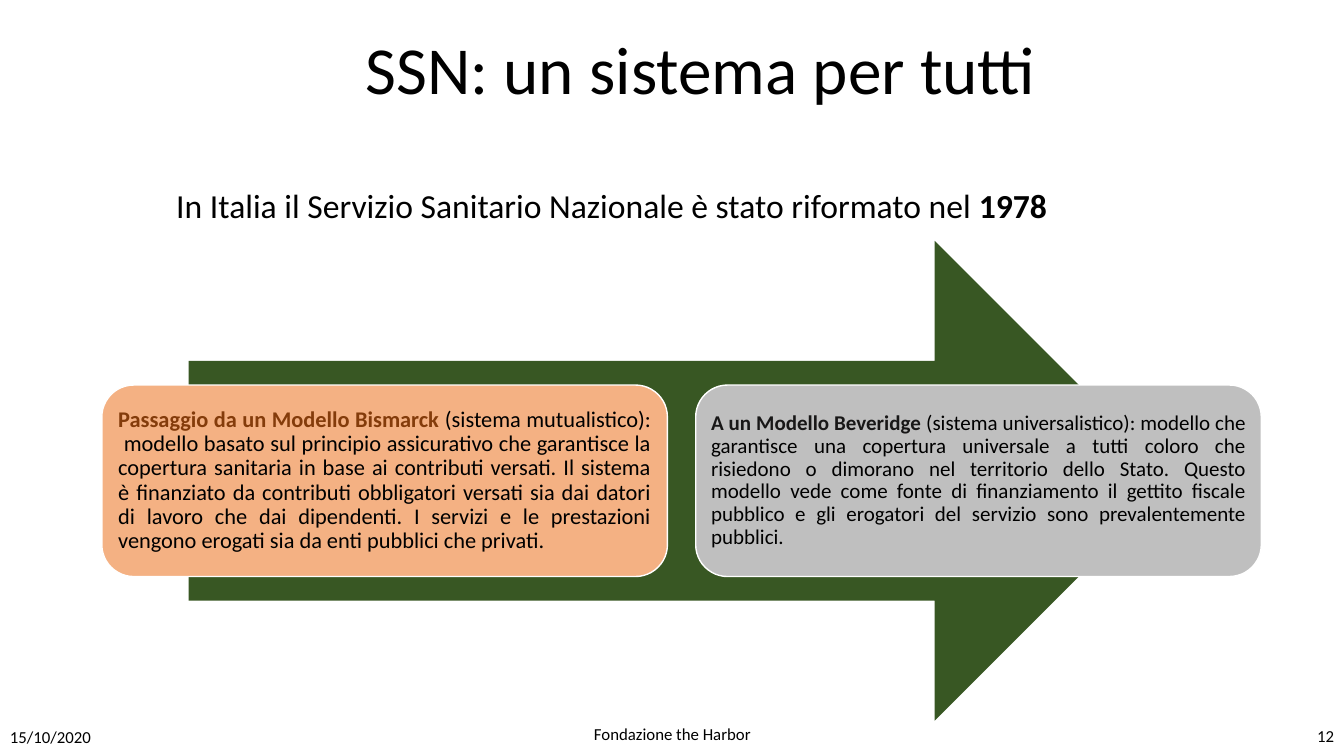
from pptx import Presentation
from pptx.dml.color import RGBColor
from pptx.enum.shapes import MSO_SHAPE
from pptx.enum.text import MSO_ANCHOR, MSO_AUTO_SIZE, PP_ALIGN
from pptx.util import Inches, Pt

FONT = "Calibri"
COLORS = {
    "text": "000000",
    "white": "FFFFFF",
    "arrow": "385723",
    "bismarck": "F4B183",
    "bismarck_lead": "843C0B",
    "beveridge": "BFBFBF",
    "beveridge_lead": "181717",
}
LEFT, CENTER, RIGHT = PP_ALIGN.LEFT, PP_ALIGN.CENTER, PP_ALIGN.RIGHT
JUSTIFY = PP_ALIGN.JUSTIFY
TOP, MIDDLE = MSO_ANCHOR.TOP, MSO_ANCHOR.MIDDLE
ARROW, ROUNDED = MSO_SHAPE.RIGHT_ARROW, MSO_SHAPE.ROUNDED_RECTANGLE
NO_AUTOFIT = MSO_AUTO_SIZE.NONE
PLAIN_TEXT = (False, "text")

CARD_TOP, CARD_WIDTH, CARD_HEIGHT = 3.82, 5.61, 1.9
CARDS = [
    # left, fill, lead colour, size, inset, lead, body
    (1.01, "bismarck", "bismarck_lead", 16, 0.07,
     "Passaggio da un Modello Bismarck ",
     "(sistema mutualistico):  modello basato sul principio assicurativo che "
     "garantisce la copertura sanitaria in base ai contributi versati. Il "
     "sistema è finanziato da contributi obbligatori versati sia dai datori di "
     "lavoro che dai dipendenti. I servizi e le prestazioni vengono erogati sia "
     "da enti pubblici che privati."),
    (6.9, "beveridge", "beveridge_lead", 15, 0.06,
     "A un Modello Beveridge ",
     "(sistema universalistico): modello che garantisce una copertura "
     "universale a tutti coloro che risiedono o dimorano nel territorio dello "
     "Stato. Questo modello vede come fonte di finanziamento il gettito fiscale "
     "pubblico e gli erogatori del servizio sono prevalentemente pubblici."),
]
FOOTERS = [
    # left, top, width, alignment, text
    (4.42, 7.08, 4.5, CENTER, "Fondazione the Harbor"),
    (10.33, 7.1, 3, RIGHT, "12"),
    (0, 7.11, 3, LEFT, "15/10/2020"),
]


def rgb(name):
    return RGBColor.from_string(COLORS[name])


def write(shape, spans, size, align=LEFT, anchor=MIDDLE, spacing=1.0):
    """Fill a shape with one paragraph of (text, bold, colour) spans."""
    frame = shape.text_frame
    frame.word_wrap = True
    frame.auto_size = NO_AUTOFIT
    frame.vertical_anchor = anchor
    para = frame.paragraphs[0]
    para.alignment = align
    para.line_spacing = spacing
    for text, bold, color in spans:
        span = para.add_run()
        span.text = text
        span.font.name = FONT
        span.font.size = Pt(size)
        span.font.bold = bold
        span.font.color.rgb = rgb(color)


def set_title(page, text):
    title = page.shapes.title
    title.left, title.top = Inches(1.2), Inches(0)
    title.width, title.height = Inches(11.5), Inches(1.45)
    write(title, [(text, *PLAIN_TEXT)], 48, CENTER, spacing=0.9)


def add_text(page, left, top, width, height, spans, size, **layout):
    box = page.shapes.add_textbox(
        Inches(left), Inches(top), Inches(width), Inches(height))
    write(box, spans, size, **layout)


def add_block(page, kind, left, top, width, height, fill):
    block = page.shapes.add_shape(
        kind, Inches(left), Inches(top), Inches(width), Inches(height))
    block.shadow.inherit = False
    block.fill.solid()
    block.fill.fore_color.rgb = rgb(fill)
    block.line.fill.background()
    return block


def add_card(page, left, fill, lead_color, size, inset, lead, body):
    card = add_block(page, ROUNDED, left, CARD_TOP, CARD_WIDTH, CARD_HEIGHT, fill)
    card.line.color.rgb = rgb("white")
    card.line.width = Pt(1)
    frame = card.text_frame
    frame.margin_left = frame.margin_right = Inches(inset)
    frame.margin_top = frame.margin_bottom = Inches(inset)
    spans = [(lead, True, lead_color), (body, *PLAIN_TEXT)]
    write(card, spans, size, JUSTIFY, spacing=0.9)


def main():
    deck = Presentation()
    deck.slide_width, deck.slide_height = Inches(13.33), Inches(7.5)
    page = deck.slides.add_slide(deck.slide_layouts.get_by_name("Title Only"))

    # Heading and introduction
    set_title(page, "SSN: un sistema per tutti")
    intro = [
        ("In Italia il Servizio Sanitario Nazionale è stato riformato nel ",
         *PLAIN_TEXT),
        ("1978", True, "text"),
    ]
    add_text(page, 1.65, 1.79, 10.03, 0.5, intro, 24, anchor=TOP)

    # From one model to the other
    add_block(page, ARROW, 1.87, 2.39, 9.78, 4.76, "arrow")
    for card in CARDS:
        add_card(page, *card)

    # Footer
    for left, top, width, align, text in FOOTERS:
        add_text(page, left, top, width, 0.4, [(text, *PLAIN_TEXT)], 12,
                 align=align)

    deck.save("out.pptx")


if __name__ == "__main__":
    main()
